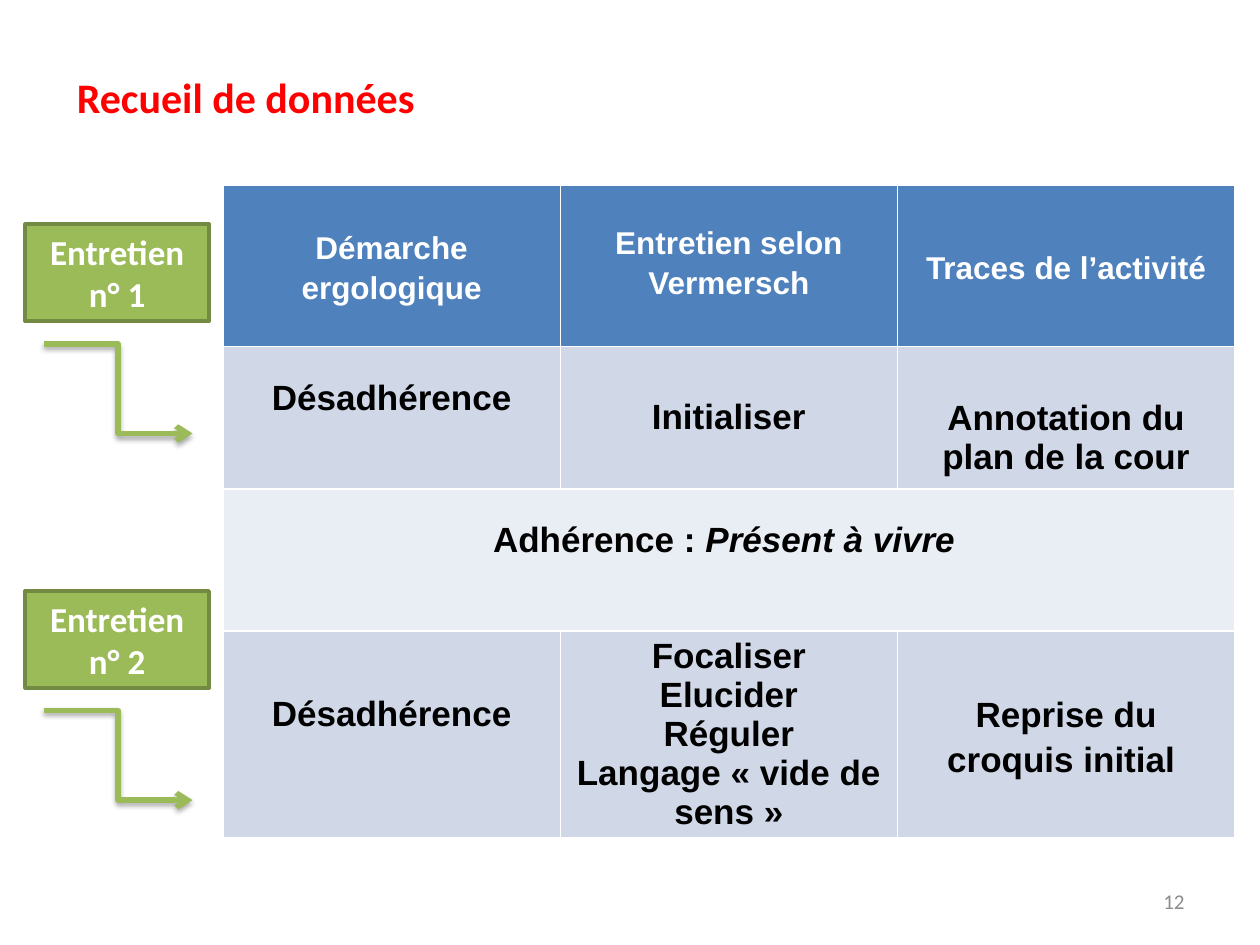
from lxml.etree import SubElement
from pptx import Presentation
from pptx.dml.color import RGBColor
from pptx.enum.shapes import MSO_CONNECTOR, MSO_SHAPE
from pptx.enum.text import MSO_ANCHOR, PP_ALIGN
from pptx.oxml import parse_xml
from pptx.oxml.ns import nsdecls, qn
from pptx.util import Inches, Pt

WHITE = RGBColor(0xFF, 0xFF, 0xFF)
BLACK = RGBColor(0x00, 0x00, 0x00)
RED = RGBColor(0xFF, 0x00, 0x00)
GREY = RGBColor(0x8C, 0x8C, 0x8C)
GREEN = RGBColor(0x9B, 0xBB, 0x59)
DARK_GREEN = RGBColor(0x73, 0x8A, 0x42)
BLUE = RGBColor(0x4F, 0x81, 0xBD)
PALE_BLUE = RGBColor(0xD0, 0xD8, 0xE8)
PALEST_BLUE = RGBColor(0xE9, 0xED, 0xF4)

ROW_HEIGHTS = [1.28, 1.13, 1.13, 1.64]
ROW_FILLS = [BLUE, PALE_BLUE, PALEST_BLUE, PALE_BLUE]
# Each cell: paragraphs, line spacing, vertical nudge in inches (positive is down)
TABLE_CELLS = [
    [(["Démarche ergologique"], 1.15, 0),
     (["Entretien selon Vermersch"], 1.15, -0.04),
     (["Traces de l’activité"], 1.15, 0)],
    [(["Désadhérence"], 1.15, -0.18),
     (["Initialiser"], 1, 0),
     (["Annotation du plan de la cour"], 1, 0.16)],
    [(["Adhérence : "], 1.15, -0.18)],
    [(["Désadhérence"], 1.15, -0.18),
     (["Focaliser", "Elucider", "Réguler", "Langage « vide de sens »"], 1, 0),
     (["Reprise du croquis initial "], 1.15, 0)],
]


def add_run(paragraph, text, size, color, font="Calibri", bold=True, italic=False):
    run = paragraph.add_run()
    run.text = text
    run.font.name = font
    run.font.size = Pt(size)
    run.font.bold = bold
    run.font.italic = italic
    run.font.color.rgb = color


def place_title(slide, left, top, width, height):
    title = slide.shapes.title
    title.left, title.top, title.width, title.height = left, top, width, height
    frame = title.text_frame
    frame.word_wrap = False
    frame.vertical_anchor = MSO_ANCHOR.MIDDLE
    paragraph = frame.paragraphs[0]
    paragraph.alignment = PP_ALIGN.LEFT
    add_run(paragraph, "Recueil de données", 24, RED)


def style_cell(cell, fill):
    """Give the cell thin white borders, then its fill."""
    properties = cell._tc.get_or_add_tcPr()
    for side in ("lnL", "lnR", "lnT", "lnB"):
        line = SubElement(properties, qn(f"a:{side}"), w=str(Pt(1)))
        solid = SubElement(line, qn("a:solidFill"))
        SubElement(solid, qn("a:srgbClr"), val=str(WHITE))
    cell.fill.solid()
    cell.fill.fore_color.rgb = fill


def fill_cell(cell, paragraphs, spacing, nudge, size, color):
    cell.vertical_anchor = MSO_ANCHOR.MIDDLE
    cell.margin_left = cell.margin_right = Inches(0.1)
    cell.margin_top = Inches(0.04 + 2 * max(nudge, 0))
    cell.margin_bottom = Inches(0.04 + 2 * max(-nudge, 0))
    frame = cell.text_frame
    for index, text in enumerate(paragraphs):
        paragraph = frame.add_paragraph() if index else frame.paragraphs[0]
        paragraph.alignment = PP_ALIGN.CENTER
        paragraph.line_spacing = spacing
        add_run(paragraph, text, size, color, "Arial")


def place_table(slide, left, top, width, height):
    column_count = len(TABLE_CELLS[0])
    table = slide.shapes.add_table(len(TABLE_CELLS), column_count,
                                   left, top, width, height).table
    for column in table.columns:
        column.width = width // column_count
    for row, share, fill in zip(table.rows, ROW_HEIGHTS, ROW_FILLS):
        row.height = int(height * share / sum(ROW_HEIGHTS))
        for cell in row.cells:
            style_cell(cell, fill)
    table.cell(2, 0).merge(table.cell(2, column_count - 1))
    for row_index, row_cells in enumerate(TABLE_CELLS):
        size, color = (20, BLACK) if row_index else (18, WHITE)
        for column_index, content in enumerate(row_cells):
            fill_cell(table.cell(row_index, column_index), *content, size, color)
    add_run(table.cell(2, 0).text_frame.paragraphs[0], "Présent à vivre ",
            20, BLACK, "Arial", italic=True)


def add_elbow_arrow(slide, start_x, start_y, end_x, end_y):
    arrow = slide.shapes.add_connector(MSO_CONNECTOR.ELBOW,
                                       start_x, start_y, end_x, end_y)
    arrow.line.color.rgb = GREEN
    arrow.line.width = Pt(3)
    SubElement(arrow.line._get_or_add_ln(), qn("a:tailEnd"), type="arrow")
    arrow._element.spPr.append(parse_xml(
        f'<a:effectLst {nsdecls("a")}>'
        f'<a:outerShdw blurRad="{Pt(3.1)}" dist="{Pt(1.8)}" dir="5400000" rotWithShape="0">'
        '<a:srgbClr val="000000"><a:alpha val="35000"/></a:srgbClr>'
        '</a:outerShdw></a:effectLst>'))


def place_interview(slide, label, left, top, width, height):
    """Place a labelled box with an elbow arrow below it."""
    box = slide.shapes.add_shape(MSO_SHAPE.RECTANGLE, left, top,
                                 width, int(height * 0.464))
    box.shadow.inherit = False
    box.fill.solid()
    box.fill.fore_color.rgb = GREEN
    box.line.color.rgb = DARK_GREEN
    box.line.width = Pt(2)
    frame = box.text_frame
    frame.word_wrap = True
    frame.vertical_anchor = MSO_ANCHOR.MIDDLE
    paragraph = frame.paragraphs[0]
    paragraph.alignment = PP_ALIGN.CENTER
    add_run(paragraph, label, 20, WHITE)
    add_elbow_arrow(slide, left + int(width * 0.1), top + int(height * 0.572),
                    left + int(width * 0.91), top + height)


def place_slide_number(slide, left, top, width, height):
    frame = slide.shapes.add_textbox(left, top, width, height).text_frame
    frame.word_wrap = True
    frame.vertical_anchor = MSO_ANCHOR.MIDDLE
    paragraph = frame.paragraphs[0]
    paragraph.alignment = PP_ALIGN.RIGHT
    add_run(paragraph, "12", 12, GREY, bold=False)


def main():
    presentation = Presentation()
    presentation.slide_width = Inches(10)
    presentation.slide_height = Inches(7.5)
    slide = presentation.slides.add_slide(presentation.slide_layouts[5])
    place_title(slide, Inches(0.51), Inches(0.52), Inches(2.97), Inches(0.5))
    place_table(slide, Inches(1.77), Inches(1.47), Inches(8.03),
                Inches(sum(ROW_HEIGHTS)))
    for label, top in (("Entretien n° 1", 1.78), ("Entretien n° 2", 4.69)):
        place_interview(slide, label, Inches(0.2), Inches(top),
                        Inches(1.46), Inches(1.66))
    place_slide_number(slide, Inches(7.17), Inches(6.95), Inches(2.33), Inches(0.4))
    presentation.save("out.pptx")


if __name__ == "__main__":
    main()
